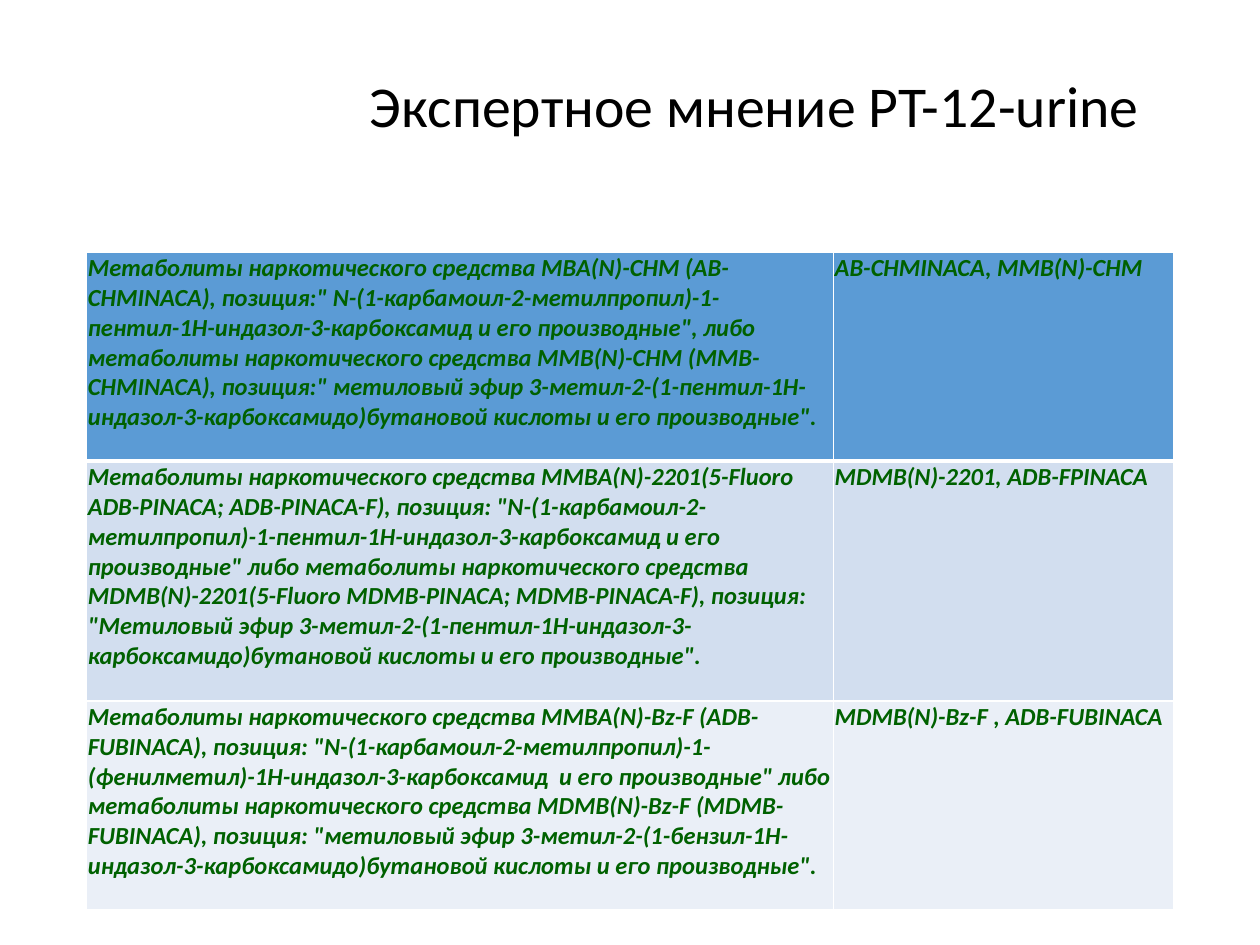
from lxml import etree
from pptx import Presentation
from pptx.dml.color import RGBColor
from pptx.enum.text import MSO_ANCHOR, PP_ALIGN
from pptx.oxml.ns import qn
from pptx.util import Pt

RIGHT = PP_ALIGN.RIGHT
MIDDLE = MSO_ANCHOR.MIDDLE

TITLE_FONT = {"name": "Calibri", "size": Pt(33), "bold": False}
CELL_FONT = {"name": "Calibri", "size": Pt(14), "bold": True, "italic": True}
CELL_MARGINS = {"margin_left": Pt(0.75), "margin_top": Pt(0.75),
                "margin_right": Pt(0.75), "margin_bottom": Pt(0)}

COLUMN_WIDTHS = (426.75, 194.25)
ROW_HEIGHTS = (119.5, 137, 119.5)
ROW_FILLS = ("5B9BD5", "D2DEEF", "EAEFF7")
THIN, THICK = 1, 3

OPINIONS = (
    ('Метаболиты наркотического средства MBA(N)-CHM (AB-CHMINACA), '
     'позиция:" N-(1-карбамоил-2-метилпропил)-1-пентил-1Н-индазол-3-карбоксамид '
     'и его производные", либо метаболиты наркотического средства MMB(N)-CHM '
     '(MMB-CHMINACA), позиция:" метиловый эфир 3-метил-2-(1-пентил-1H-индазол-3-'
     'карбоксамидо)бутановой кислоты и его производные".',
     'AB-CHMINACA, MMB(N)-CHM'),
    ('Метаболиты наркотического средства MMBA(N)-2201(5-Fluoro ADB-PINACA; '
     'ADB-PINACA-F), позиция: "N-(1-карбамоил-2-метилпропил)-1-пентил-1Н-индазол-3-'
     'карбоксамид и его производные" либо метаболиты наркотического средства '
     'MDMB(N)-2201(5-Fluoro MDMB-PINACA; MDMB-PINACA-F), позиция: "Метиловый эфир '
     '3-метил-2-(1-пентил-1H-индазол-3-карбоксамидо)бутановой кислоты и его '
     'производные".',
     'MDMB(N)-2201, ADB-FPINACA'),
    ('Метаболиты наркотического средства MMBA(N)-Bz-F (ADB-FUBINACA), позиция: '
     '"N-(1-карбамоил-2-метилпропил)-1-(фенилметил)-1Н-индазол-3-карбоксамид  и его '
     'производные" либо метаболиты наркотического средства MDMB(N)-Bz-F '
     '(MDMB-FUBINACA), позиция: "метиловый эфир 3-метил-2-(1-бензил-1Н-индазол-3-'
     'карбоксамидо)бутановой кислоты и его производные".',
     'MDMB(N)-Bz-F , ADB-FUBINACA'),
)


def color(value):
    return RGBColor.from_string(value)


def set_attributes(target, values):
    for name, value in values.items():
        setattr(target, name, value)


def write_text(paragraph, text, font_values, font_color):
    run = paragraph.add_run()
    run.text = text
    set_attributes(run.font, font_values)
    run.font.color.rgb = color(font_color)


def set_borders(cell, widths):
    """Draw white cell borders; call before the fill, which must follow in the XML."""
    properties = cell._tc.get_or_add_tcPr()
    for side, width in widths.items():
        line = etree.SubElement(properties, qn(f"a:ln{side}"), w=str(Pt(width)))
        fill = etree.SubElement(line, qn("a:solidFill"))
        etree.SubElement(fill, qn("a:srgbClr"), val="FFFFFF")


def add_title(slide, left, top, width, height):
    shape = slide.shapes.add_textbox(Pt(left), Pt(top), Pt(width), Pt(height))
    set_attributes(shape.text_frame, {"word_wrap": True, "vertical_anchor": MIDDLE})
    paragraph = shape.text_frame.paragraphs[0]
    set_attributes(paragraph, {"alignment": RIGHT, "line_spacing": 0.9})
    write_text(paragraph, "Экспертное мнение PT-12-urine", TITLE_FONT, "000000")


def add_opinion_table(slide, left, top):
    shape = slide.shapes.add_table(
        len(OPINIONS), len(COLUMN_WIDTHS), Pt(left), Pt(top),
        Pt(sum(COLUMN_WIDTHS)), Pt(sum(ROW_HEIGHTS)))
    table = shape.table
    for column, width in zip(table.columns, COLUMN_WIDTHS):
        column.width = Pt(width)
    for row_index, texts in enumerate(OPINIONS):
        table.rows[row_index].height = Pt(ROW_HEIGHTS[row_index])
        borders = {"L": THIN, "R": THIN,
                   "T": THICK if row_index == 1 else THIN,
                   "B": THICK if row_index == 0 else THIN}
        for column_index, text in enumerate(texts):
            cell = table.cell(row_index, column_index)
            set_attributes(cell, CELL_MARGINS)
            set_borders(cell, borders)
            cell.fill.solid()
            cell.fill.fore_color.rgb = color(ROW_FILLS[row_index])
            write_text(cell.text_frame.paragraphs[0], text, CELL_FONT, "006100")


def main():
    presentation = Presentation()
    set_attributes(presentation, {"slide_width": Pt(720), "slide_height": Pt(540)})
    slide = presentation.slides.add_slide(presentation.slide_layouts[6])
    add_title(slide, 61, 30, 597, 64)
    add_opinion_table(slide, 49.5, 144)
    presentation.save("out.pptx")


if __name__ == "__main__":
    main()
